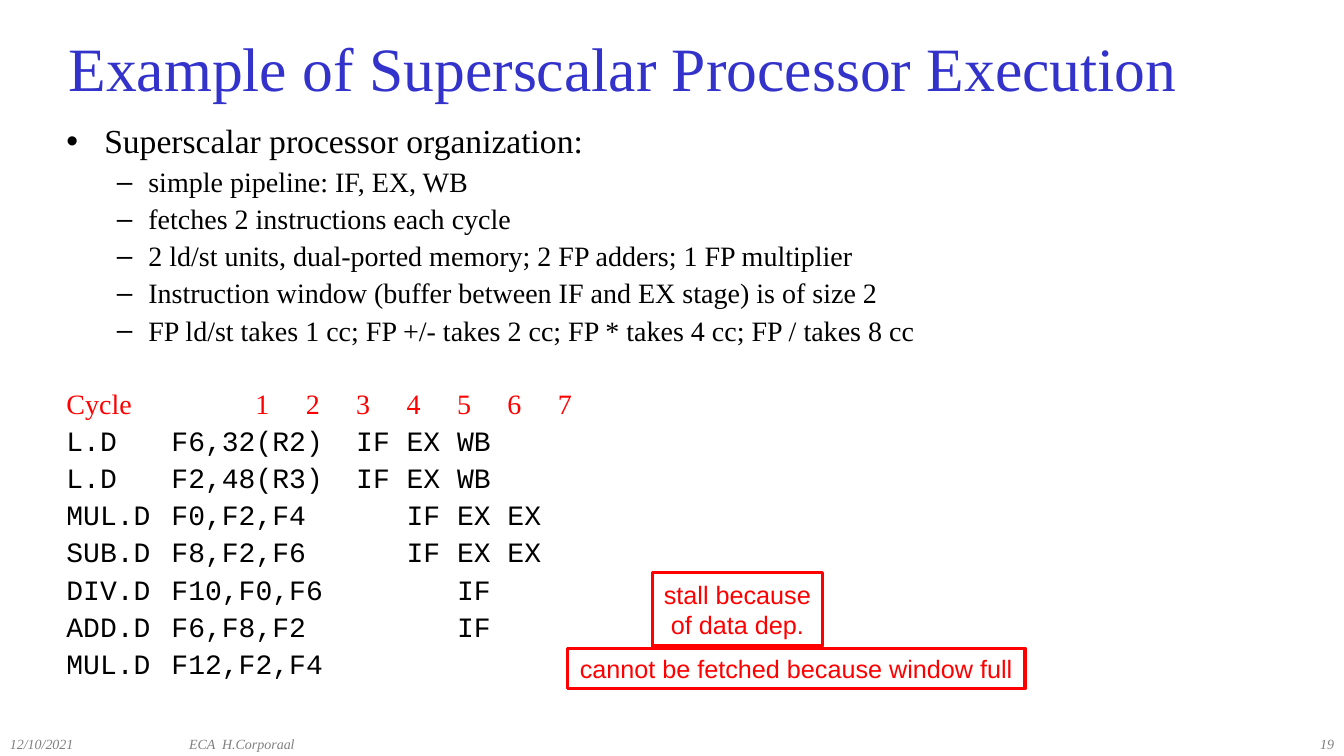
from pptx import Presentation
from pptx.dml.color import RGBColor
from pptx.enum import shapes, text
from pptx.oxml import ns
from pptx.util import Pt
from lxml import etree

BLUE = RGBColor(0x33, 0x33, 0xCC)
BLACK = RGBColor(0, 0, 0)
RED = RGBColor(0xFF, 0, 0)
GRAY = RGBColor(0x80, 0x80, 0x80)
SERIF, MONO, SANS = "Times New Roman", "Courier New", "Arial"


def style(p, size, font, color, align=text.PP_ALIGN.LEFT):
    p.font.size = Pt(size)
    p.font.name = font
    p.font.color.rgb = color
    p.alignment = align


def indent(p, left, hanging, bullet=None):
    pPr = p._p.get_or_add_pPr()
    pPr.set("marL", str(Pt(left)))
    pPr.set("indent", str(Pt(-hanging)))
    if bullet:
        bu = etree.Element(ns.qn("a:buChar"), char=bullet)
    else:
        bu = etree.Element(ns.qn("a:buNone"))
    pPr.insert_element_before(bu, "a:tabLst", "a:defRPr", "a:extLst")


prs = Presentation()
prs.slide_width, prs.slide_height = Pt(960), Pt(540)
s = prs.slides.add_slide(prs.slide_layouts[1])

title = s.shapes.title
title.left, title.top, title.width, title.height = Pt(41.75), Pt(18), Pt(896), Pt(60)
tf = title.text_frame
tf.text = "Example of Superscalar Processor Execution"
tf.auto_size = text.MSO_AUTO_SIZE.NONE
tf.vertical_anchor = text.MSO_ANCHOR.MIDDLE
style(tf.paragraphs[0], 44, SERIF, BLUE)

organization = [
    "simple pipeline: IF, EX, WB",
    "fetches 2 instructions each cycle",
    "2 ld/st units, dual-ported memory; 2 FP adders; 1 FP multiplier",
    "Instruction window (buffer between IF and EX stage) is of size 2",
    "FP ld/st takes 1 cc; FP +/- takes 2 cc; FP * takes 4 cc; FP / takes 8 cc",
]
schedule = [
    ("L.D", "F6,32(R2)", 1, "IF EX WB"),
    ("L.D", "F2,48(R3)", 1, "IF EX WB"),
    ("MUL.D", "F0,F2,F4", 2, "IF EX EX"),
    ("SUB.D", "F8,F2,F6", 2, "IF EX EX"),
    ("DIV.D", "F10,F0,F6", 3, "IF"),
    ("ADD.D", "F6,F8,F2", 3, "IF"),
    ("MUL.D", "F12,F2,F4", 0, ""),
]

body = s.placeholders[1]
body.left, body.top, body.width, body.height = Pt(40.25), Pt(85.5), Pt(896), Pt(425.5)
tf = body.text_frame
tf.auto_size = text.MSO_AUTO_SIZE.NONE
tf.vertical_anchor = text.MSO_ANCHOR.TOP
p = tf.paragraphs[0]
p.text = "Superscalar processor organization:"
p.line_spacing, p.space_before = 0.9, Pt(0)
style(p, 24, SERIF, BLACK)
indent(p, 27, 27, "•")

for line in organization:
    p = tf.add_paragraph()
    p.text, p.level = line, 1
    p.line_spacing, p.space_before = 0.9, Pt(5)
    style(p, 20, SERIF, BLACK)
    indent(p, 58.5, 22.5, "–")

rows = [("Cycle\t\t\t" + "\t".join(str(n) for n in range(1, 8)), SERIF, RED, 30.5)]
for op, operands, start, stages in schedule:
    line = f"{op}\t {operands}" + "\t" * start + stages.replace(" ", "\t")
    rows.append((line, MONO, BLACK, 5))
for line, font, color, gap in rows:
    p = tf.add_paragraph()
    p.text = line
    p.line_spacing, p.space_before = 0.9, Pt(gap)
    style(p, 20, font, color)
    indent(p, 27, 27)

for line, left, width, align in [
    ("12/10/2021", 0, 128, text.PP_ALIGN.LEFT),
    ("ECA  H.Corporaal", 128, 304, text.PP_ALIGN.LEFT),
    ("19", 760, 200, text.PP_ALIGN.RIGHT),
]:
    footer = s.shapes.add_textbox(Pt(left), Pt(522), Pt(width), Pt(18))
    tf = footer.text_frame
    tf.word_wrap = True
    p = tf.paragraphs[0]
    p.text = line
    style(p, 10, SERIF, GRAY, align)
    p.font.italic = True

for lines, left, top, width, height in [
    (["stall because", "of data dep."], 466, 409, 121.5, 52.5),
    (["cannot be fetched because window full"], 405.25, 463, 327, 29),
]:
    sp = s.shapes.add_shape(shapes.MSO_SHAPE.RECTANGLE, Pt(left), Pt(top), Pt(width), Pt(height))
    sp.shadow.inherit = False
    sp.fill.background()
    sp.line.color.rgb = RED
    sp.line.width = Pt(2.25)
    tf = sp.text_frame
    tf.word_wrap = False
    tf.text = "\n".join(lines)
    for p in tf.paragraphs:
        style(p, 18, SANS, RED, text.PP_ALIGN.CENTER)

prs.save("out.pptx")
